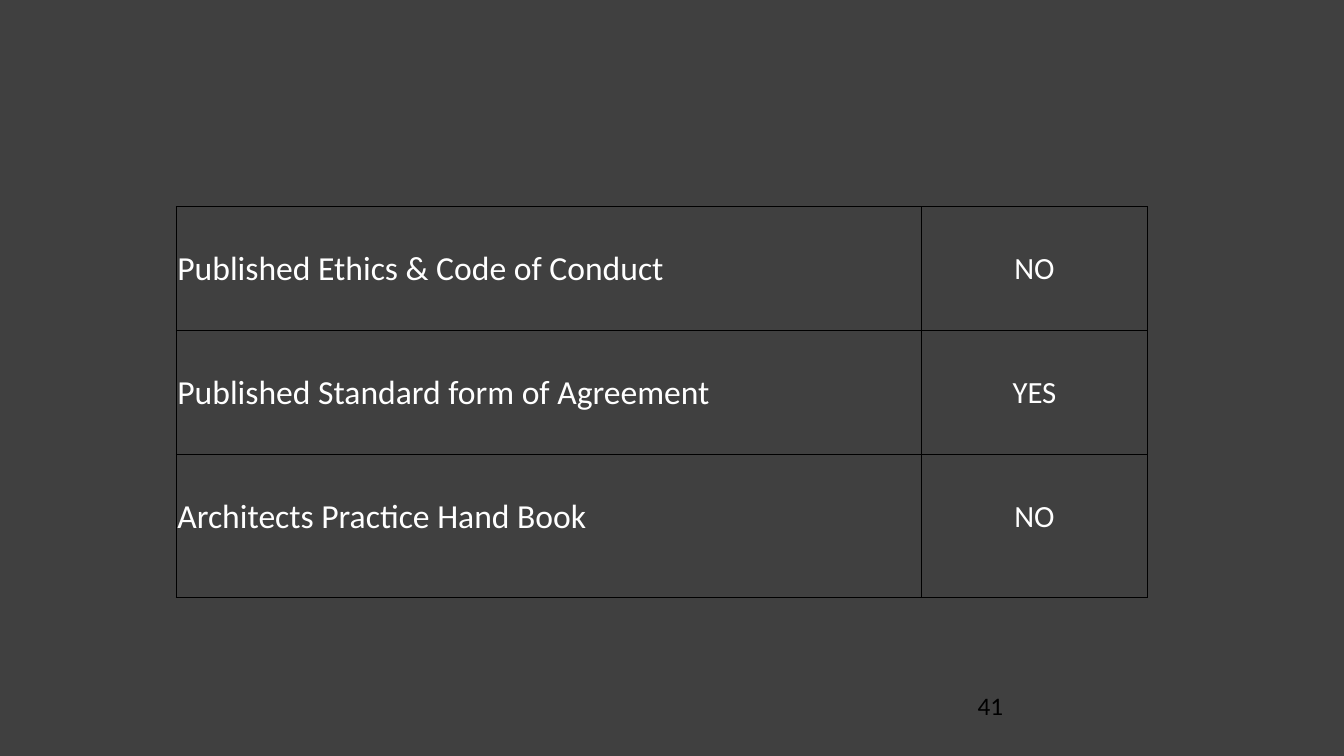
from lxml import etree
from pptx import Presentation
from pptx.dml.color import RGBColor
from pptx.enum.shapes import MSO_SHAPE
from pptx.enum.text import MSO_ANCHOR, PP_ALIGN
from pptx.oxml.ns import qn
from pptx.util import Inches, Pt

RECTANGLE = MSO_SHAPE.RECTANGLE
TOP = MSO_ANCHOR.TOP
LEFT, CENTER = PP_ALIGN.LEFT, PP_ALIGN.CENTER

COLORS = {"backdrop": "404040", "light": "FFFFFF", "dark": "000000"}
GRID_COLUMNS, GRID_ROWS = 160, 90
LABEL = {"size": 24, "color": "light", "align": LEFT, "margins": (0.01, 0.42, 0.01, 0)}
ANSWER = {"size": 22, "color": "light", "align": CENTER, "margins": (0.12, 0.43, 0.12, 0.06)}
PAGE_NUMBER = {"size": 18, "color": "dark", "align": LEFT, "margins": (0.1, 0.05, 0.1, 0.05)}
CHECKLIST = [
    ("Published Ethics & Code of Conduct", "NO"),
    ("Published Standard form of Agreement", "YES"),
    ("Architects Practice Hand Book", "NO"),
]


class SlideBuilder:
    font_name = "Calibri"

    def __init__(self, presentation):
        self.column = presentation.slide_width / GRID_COLUMNS
        self.row = presentation.slide_height / GRID_ROWS
        self.slide = presentation.slides.add_slide(presentation.slide_layouts[6])

    def place(self, left, top, width, height):
        units = (self.column, self.row, self.column, self.row)
        return [round(value * unit) for value, unit in zip((left, top, width, height), units)]

    def color(self, name):
        return RGBColor.from_string(COLORS[name])

    def set_text(self, holder, text_frame, text, style):
        sides = ("margin_left", "margin_top", "margin_right", "margin_bottom")
        for side, margin in zip(sides, style["margins"]):
            setattr(holder, side, Inches(margin))
        holder.vertical_anchor = TOP
        text_frame.word_wrap = True
        paragraph = text_frame.paragraphs[0]
        paragraph.text = text
        paragraph.alignment = style["align"]
        font = paragraph.runs[0].font
        for name, value in {"name": self.font_name, "size": Pt(style["size"])}.items():
            setattr(font, name, value)
        font.color.rgb = self.color(style["color"])

    def rectangle(self, box, color):
        shape = self.slide.shapes.add_shape(RECTANGLE, *self.place(*box))
        shape.shadow.inherit = False
        shape.fill.solid()
        shape.fill.fore_color.rgb = self.color(color)
        shape.line.fill.background()

    def text(self, box, text, style):
        text_frame = self.slide.shapes.add_textbox(*self.place(*box)).text_frame
        self.set_text(text_frame, text_frame, text, style)

    def border(self, cell, color):
        properties = cell._tc.get_or_add_tcPr()
        for position, side in enumerate(("a:lnL", "a:lnR", "a:lnT", "a:lnB")):
            line = etree.Element(qn(side), w=str(Pt(1)))
            fill = etree.SubElement(line, qn("a:solidFill"))
            etree.SubElement(fill, qn("a:srgbClr"), val=COLORS[color])
            properties.insert(position, line)

    def table(self, left, top, widths, heights, content, styles):
        box = self.place(left, top, sum(widths), sum(heights))
        table = self.slide.shapes.add_table(len(heights), len(widths), *box).table
        for name in ("first_row", "horz_banding"):
            setattr(table, name, False)
        for column, width in zip(table.columns, widths):
            column.width = round(width * self.column)
        for row, height, texts in zip(table.rows, heights, content):
            row.height = round(height * self.row)
            for cell, text, style in zip(row.cells, texts, styles):
                self.set_text(cell, cell.text_frame, text, style)
                cell.fill.background()
                self.border(cell, "dark")


def main():
    presentation = Presentation()
    presentation.slide_width = Inches(13.33)
    presentation.slide_height = Inches(7.5)
    builder = SlideBuilder(presentation)
    builder.rectangle((0, 0, GRID_COLUMNS, GRID_ROWS), "backdrop")
    builder.text((115.2, 81.6, 37.3, 6.2), "41", PAGE_NUMBER)
    builder.table(21, 24.6, (88.7, 26.9), (14.76, 14.76, 17.04), CHECKLIST, (LABEL, ANSWER))
    presentation.save("out.pptx")


if __name__ == "__main__":
    main()
